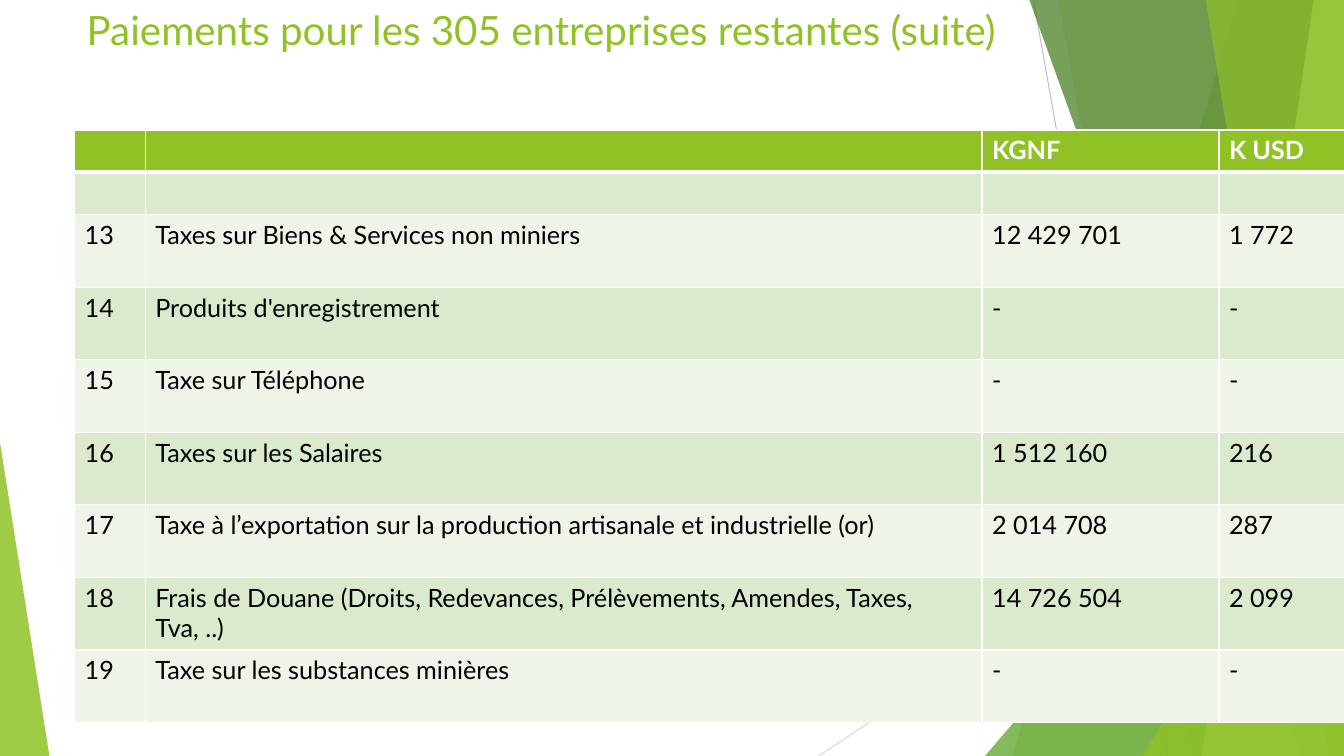
from dataclasses import dataclass

from lxml import etree
from pptx import Presentation
from pptx.dml.color import RGBColor
from pptx.enum.shapes import MSO_CONNECTOR, MSO_SHAPE
from pptx.enum.text import MSO_ANCHOR, MSO_AUTO_SIZE, PP_ALIGN
from pptx.oxml.ns import qn
from pptx.util import Pt

STRAIGHT = MSO_CONNECTOR.STRAIGHT
TRIANGLE = MSO_SHAPE.ISOSCELES_TRIANGLE
TOP = MSO_ANCHOR.TOP
LEFT = PP_ALIGN.LEFT
NO_FIT = MSO_AUTO_SIZE.NONE


@dataclass(frozen=True)
class Theme:
    font: str = "Lato"
    title_size: float = 28.8
    cell_size: int = 18
    green: str = "90C226"
    leaf: str = "54A021"
    forest: str = "3F7819"
    lime: str = "C0E474"
    white: str = "FFFFFF"
    black: str = "000000"
    bands: tuple = ("DBE9CD", "EEF4E8")
    grid_width: int = 1
    header_rule_width: int = 3


THEME = Theme()
PX = 9144
WIDTH, HEIGHT = 1333, 750

TITLE = "Paiements pour les 305 entreprises restantes (suite)"
TITLE_BOX = (76, 0, 1013, 116)

HEADER = ("", "", "KGNF", "K USD")
PAYMENTS = [
    ("", "", "", ""),
    ("13", "Taxes sur Biens & Services non miniers", "12 429 701", "1 772"),
    ("14", "Produits d'enregistrement", "-", "-"),
    ("15", "Taxe sur Téléphone", "-", "-"),
    ("16", "Taxes sur les Salaires", "1 512 160", "216"),
    ("17", "Taxe à l’exportation sur la production artisanale et industrielle (or)",
     "2 014 708", "287"),
    ("18", "Frais de Douane (Droits, Redevances, Prélèvements, Amendes, Taxes, Tva, ..)",
     "14 726 504", "2 099"),
    ("19", "Taxe sur les substances minières", "-", "-"),
]
TABLE_LEFT, TABLE_TOP = 74, 129
COLUMN_WIDTHS = (70, 830, 235, 125)
SHORT_ROW, TALL_ROW = 42, 72

RAYS = [
    ((1025, 0), (1158, HEIGHT), "BFBFBF"),
    ((WIDTH, 403), (812, HEIGHT), "D9D9D9"),
]
FACETS = [
    ("band", 1228, 1004, THEME.green, 30),
    ("band", 1050, 1183, THEME.green, 20),
    ("corner", (977, 333, 356, 417), 1, THEME.leaf, 72),
    ("band", 1021, 1291, THEME.forest, 70),
    ("band", 1303, 1192, THEME.lime, 70),
    ("band", 1196, 1318, THEME.green, 65),
    ("corner", (1134, 393, 199, 357), 1, THEME.green, 80),
    ("corner", (0, 439, 49, 311), 0, THEME.green, 85),
]


def px(*lengths):
    return [length * PX for length in lengths]


def rgb(color):
    return RGBColor.from_string(color)


def add_run(paragraph, text, size, color, bold=False):
    run = paragraph.add_run()
    run.text = text
    run.font.name = THEME.font
    run.font.size = Pt(size)
    run.font.bold = bold
    run.font.color.rgb = rgb(color)


def add_ray(shapes, start, end, color):
    ray = shapes.add_connector(STRAIGHT, *px(*start, *end))
    ray.line.color.rgb = rgb(color)
    ray.line.width = Pt(0.75)
    etree.SubElement(ray.element.spPr, qn("a:effectLst"))


def add_band(shapes, top_x, bottom_x):
    outline = shapes.build_freeform(top_x, 0, scale=PX)
    outline.add_line_segments([(WIDTH, 0), (WIDTH, HEIGHT), (bottom_x, HEIGHT)])
    return outline.convert_to_shape()


def add_corner(shapes, box, apex):
    corner = shapes.add_shape(TRIANGLE, *px(*box))
    corner.adjustments[0] = apex
    return corner


def add_facet(shapes, form, first, second, color, opacity):
    facet = {"band": add_band, "corner": add_corner}[form](shapes, first, second)
    facet.shadow.inherit = False
    facet.line.fill.background()
    facet.fill.solid()
    facet.fill.fore_color.rgb = rgb(color)
    tint = facet.element.spPr.find(qn("a:solidFill"))[0]
    etree.SubElement(tint, qn("a:alpha"), val=str(opacity * 1000))


def set_borders(cell, top, bottom):
    properties = cell._tc.get_or_add_tcPr()
    sides = (("L", THEME.grid_width), ("R", THEME.grid_width), ("T", top), ("B", bottom))
    for position, (side, width) in enumerate(sides):
        border = etree.Element(qn(f"a:ln{side}"), w=str(Pt(width)))
        fill = etree.SubElement(border, qn("a:solidFill"))
        etree.SubElement(fill, qn("a:srgbClr"), val=THEME.white)
        properties.insert(position, border)


def add_title(slide):
    title = slide.shapes.title
    title.left, title.top, title.width, title.height = px(*TITLE_BOX)
    frame = title.text_frame
    frame.word_wrap = True
    frame.auto_size = NO_FIT
    frame.vertical_anchor = TOP
    frame.paragraphs[0].alignment = LEFT
    add_run(frame.paragraphs[0], TITLE, THEME.title_size, THEME.green)
    slide.shapes.element.append(title.element)


def add_payments(shapes):
    rows = [HEADER] + PAYMENTS
    heights = [SHORT_ROW] * 2 + [TALL_ROW] * (len(rows) - 2)
    box = px(TABLE_LEFT, TABLE_TOP, sum(COLUMN_WIDTHS), sum(heights))
    table = shapes.add_table(len(rows), len(HEADER), *box).table
    for column, width in zip(table.columns, px(*COLUMN_WIDTHS)):
        column.width = width
    for row, height in zip(table.rows, px(*heights)):
        row.height = height
    for r, row in enumerate(rows):
        is_header = r == 0
        top = THEME.header_rule_width if r == 1 else THEME.grid_width
        bottom = THEME.header_rule_width if is_header else THEME.grid_width
        for c, text in enumerate(row):
            cell = table.cell(r, c)
            cell.fill.solid()
            cell.fill.fore_color.rgb = rgb(THEME.green if is_header else THEME.bands[(r - 1) % 2])
            set_borders(cell, top, bottom)
            paragraph = cell.text_frame.paragraphs[0]
            paragraph.font.size = Pt(THEME.cell_size)
            if text:
                color = THEME.white if is_header else THEME.black
                add_run(paragraph, text, THEME.cell_size, color, is_header)


def main():
    deck = Presentation()
    deck.slide_width, deck.slide_height = px(WIDTH, HEIGHT)
    slide = deck.slides.add_slide(deck.slide_layouts[5])
    for ray in RAYS:
        add_ray(slide.shapes, *ray)
    for facet in FACETS:
        add_facet(slide.shapes, *facet)
    add_title(slide)
    add_payments(slide.shapes)
    deck.save("out.pptx")


if __name__ == "__main__":
    main()
